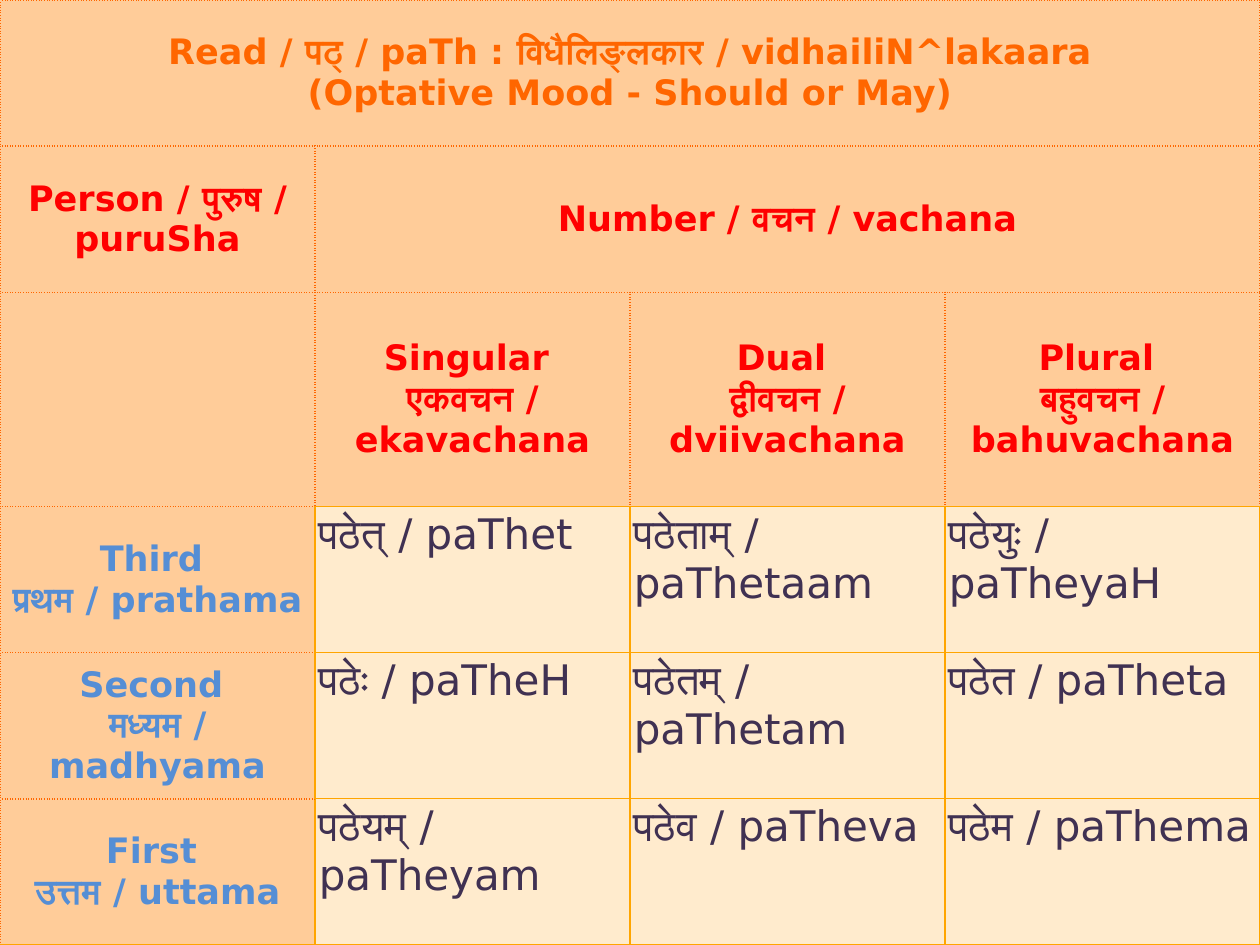
from dataclasses import dataclass

from lxml import etree
from pptx import Presentation
from pptx import util as u
from pptx.dml.color import RGBColor
from pptx.enum import text
from pptx.oxml import ns


@dataclass(frozen=True)
class Theme:
    font: str = "DejaVu Sans"
    peach: str = "FFCC99"
    cream: str = "FFEBCD"
    orange: str = "FF6600"
    amber: str = "FFA500"
    red: str = "FF0000"
    blue: str = "558ED5"
    plum: str = "403152"
    head: int = 20
    body: int = 24


@dataclass(frozen=True)
class Item:
    row: int
    col: int
    lines: tuple[str, ...]
    color: str
    span: int = 1


T = Theme()
WIDE, HIGH = 10, 7.5
ROWS, COLS = 6, 4
TOP, SIDE = 3, 1  # heading rows and heading columns
LOW, TALL = 1.16, 1.7
GAP = chr(160)  # no-break space that ends the first line of a label

# Headings
HEADS = [
    Item(0, 0, ("Read / पठ् / paTh : विधैलिङ्लकार / vidhailiN^lakaara",
                "(Optative Mood - Should or May)"), T.orange, COLS),
    Item(1, 0, ("Person / पुरुष / puruSha",), T.red),
    Item(1, 1, ("Number / वचन / vachana",), T.red, COLS - SIDE),
]
NUMBERS = [("Singular", "एकवचन / ekavachana"),
           ("Dual", "द्वीवचन / dviivachana"),
           ("Plural", "बहुवचन / bahuvachana")]
PERSONS = [("Third", "प्रथम / prathama"),
           ("Second", "मध्यम / madhyama"),
           ("First", "उत्तम / uttama")]

# Verb forms, by person and number
FORMS = [("पठेत् / paThet", "पठेताम् / paThetaam", "पठेयुः / paTheyaH"),
         ("पठेः / paTheH", "पठेतम् / paThetam", "पठेत / paTheta"),
         ("पठेयम् / paTheyam", "पठेव / paTheva", "पठेम / paThema")]


def is_body(row: int, col: int) -> bool:
    return TOP <= row < ROWS and SIDE <= col < COLS


def add_edge(cell, side: str, color: str, width: float, dash: str) -> None:
    edge = etree.SubElement(cell._tc.get_or_add_tcPr(), ns.qn(f"a:ln{side}"),
                            w=str(u.Pt(width)))
    fill = etree.SubElement(edge, ns.qn("a:solidFill"))
    etree.SubElement(fill, ns.qn("a:srgbClr"), val=color)
    etree.SubElement(edge, ns.qn("a:prstDash"), val=dash)


def style_cell(cell, row: int, col: int) -> None:
    """Dot the edges between headings; draw those of the verb forms solid."""
    body = is_body(row, col)
    for side, down, over in (("L", 0, -1), ("R", 0, 1), ("T", -1, 0), ("B", 1, 0)):
        last = side == "B" and row == ROWS - 1
        if body or last or is_body(row + down, col + over):
            add_edge(cell, side, T.amber, 0.75, "solid")
        else:
            add_edge(cell, side, T.orange, 1, "sysDot")
    cell.fill.solid()
    cell.fill.fore_color.rgb = RGBColor.from_string(T.cream if body else T.peach)
    cell.margin_left = cell.margin_right = u.Inches(0.03)
    cell.margin_top = cell.margin_bottom = u.Inches(0.03 if body else 0.01)
    cell.vertical_anchor = text.MSO_ANCHOR.TOP if body else text.MSO_ANCHOR.MIDDLE


def add_text(table, item: Item) -> None:
    cell = table.cell(item.row, item.col)
    if item.span > 1:
        cell.merge(table.cell(item.row, item.col + item.span - 1))
    body = is_body(item.row, item.col)
    para = cell.text_frame.paragraphs[0]
    para.alignment = text.PP_ALIGN.LEFT if body else text.PP_ALIGN.CENTER
    for n, line in enumerate(item.lines):
        if n:
            para.add_line_break()
        run = para.add_run()
        run.text = line
        font = run.font
        font.name, font.bold = T.font, not body
        font.size = u.Pt(T.body if body else T.head)
        font.color.rgb = RGBColor.from_string(item.color)
        etree.SubElement(run._r.get_or_add_rPr(), ns.qn("a:cs"), typeface=T.font)


def main() -> None:
    deck = Presentation()
    deck.slide_width, deck.slide_height = u.Inches(WIDE), u.Inches(HIGH)
    slide = deck.slides.add_slide(deck.slide_layouts[6])

    # Grid over the whole slide
    table = slide.shapes.add_table(ROWS, COLS, 0, 0, deck.slide_width,
                                   deck.slide_height).table
    table.first_row = table.horz_banding = False
    for row in range(ROWS):
        table.rows[row].height = u.Inches(TALL if row == TOP - 1 else LOW)
        for col in range(COLS):
            style_cell(table.cell(row, col), row, col)

    # Words
    items = list(HEADS)
    for n, (name, term) in enumerate(NUMBERS):
        items.append(Item(TOP - 1, SIDE + n, (name + GAP, term), T.red))
    for n, (name, term) in enumerate(PERSONS):
        items.append(Item(TOP + n, 0, (name + GAP, term), T.blue))
        for m, form in enumerate(FORMS[n]):
            items.append(Item(TOP + n, SIDE + m, (form,), T.plum))
    for item in items:
        add_text(table, item)

    deck.save("out.pptx")


if __name__ == "__main__":
    main()
